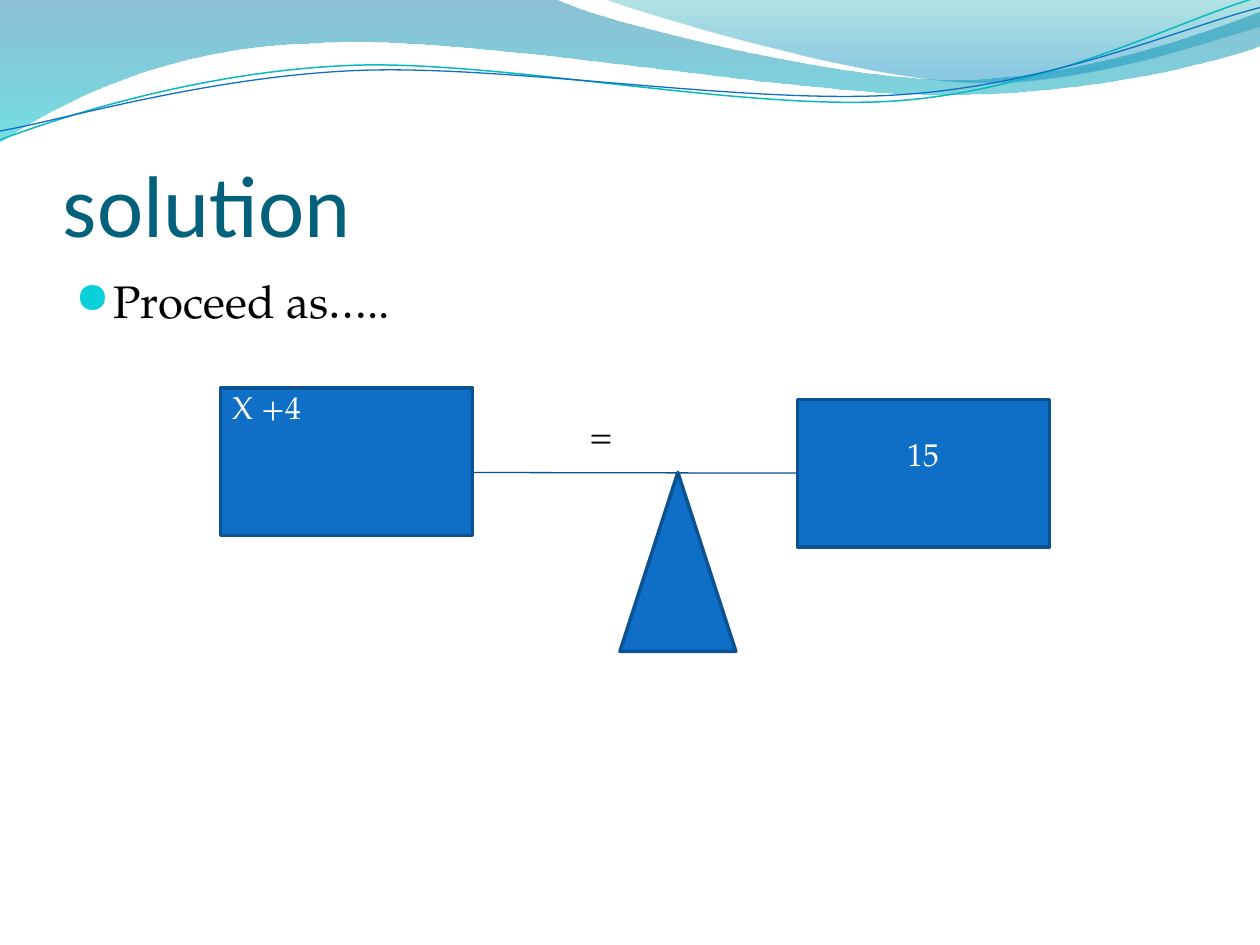
import dataclasses

import pptx
import pptx.dml.color
import pptx.enum.shapes
import pptx.enum.text
import pptx.oxml.ns
import pptx.util
from lxml import etree

Inches = pptx.util.Inches
Pt = pptx.util.Pt
MSO_SHAPE = pptx.enum.shapes.MSO_SHAPE
ANCHOR = pptx.enum.text.MSO_ANCHOR
ALIGN = pptx.enum.text.PP_ALIGN
qn = pptx.oxml.ns.qn


@dataclasses.dataclass(frozen=True)
class Theme:
    heading_font: str = "Calibri"
    body_font: str = "TeX Gyre Pagella"
    bullet_font: str = "OpenSymbol"
    title_size: int = 50
    body_size: int = 26
    label_size: int = 18
    title: str = "04617B"
    text: str = "000000"
    label: str = "FFFFFF"
    bullet: str = "0BD0D9"
    fill: str = "0F6FC6"
    outline: str = "0B5292"
    beam: str = "095295"
    teal_wave: str = "0AB8BF"


THEME = Theme()

# Outlines: a pair is a straight step, six numbers are a Bézier curve.
# Bands also carry gradient stops of (position, colour, opacity percent).
BANDS = [
    ([(0, 0), (4.4, -0.01), (4.76, 0.17, 6.64, 0.63, 7.58, 0.63),
      (8.53, 0.63, 9.58, 0.26, 10, 0.09), (10.01, 0.36),
      (9.83, 0.44, 8.7, 0.76, 7.46, 0.75),
      (6.22, 0.75, 3.82, 0.28, 2.57, 0.34),
      (1.29, 0.36, 0.46, 0.83, -0.01, 1.13)],
     [(0, "0074A1", 45), (1, "00C6CF", 55)]),
    ([(4.79, -0.01), (5.09, 0.11, 6.82, 0.62, 7.69, 0.65),
      (8.56, 0.69, 9.61, 0.32, 10, 0.21), (10, 0)],
     [(0, "00A1A9", 30), (0.8, "008BBF", 45)]),
]
WAVES = [
    ([(0, 1.11), (0.48, 0.93, 1.58, 0.57, 2.77, 0.52),
      (3.95, 0.47, 5.93, 0.89, 7.13, 0.8),
      (8.33, 0.71, 9.38, 0.15, 9.98, -0.02)], THEME.teal_wave, 0.85),
    ([(0, 1.04), (0.47, 0.96, 1.64, 0.61, 2.83, 0.56),
      (4.03, 0.51, 5.97, 0.84, 7.17, 0.75),
      (8.36, 0.67, 9.41, 0.21, 10, 0.06)], THEME.fill, 0.75),
]


def rgb(value):
    return pptx.dml.color.RGBColor.from_string(value)


def set_line(line, color, width):
    line.color.rgb = rgb(color)
    line.width = Pt(width)


def add_outline(slide, outline, close):
    """Draw all points as segments, then join each curve's three into one."""
    points = [(Inches(step[i]), Inches(step[i + 1]))
              for step in outline for i in range(0, len(step), 2)]
    builder = slide.shapes.build_freeform(*points[0])
    builder.add_line_segments(points[1:], close=close)
    shape = builder.convert_to_shape()
    shape.shadow.inherit = False
    segments = iter(list(shape._element.iter(qn("a:lnTo"))))
    for step in outline[1:]:
        first = next(segments)
        if len(step) == 2:
            continue
        first.tag = qn("a:cubicBezTo")
        for _ in range(2):
            segment = next(segments)
            first.append(segment[0])
            segment.getparent().remove(segment)
    return shape


def add_band(slide, outline, stops):
    shape = add_outline(slide, outline, True)
    shape.line.fill.background()
    shape.fill.gradient()
    shape.fill.gradient_angle = 270
    for stop, (position, color, _) in zip(shape.fill.gradient_stops, stops):
        stop.position = position
        stop.color.rgb = rgb(color)
    gradient = shape._element.spPr.find(qn("a:gradFill"))
    for color, (_, _, opacity) in zip(gradient.iter(qn("a:srgbClr")), stops):
        etree.SubElement(color, qn("a:alpha")).set("val", str(opacity * 1000))


def add_wave(slide, outline, color, width):
    shape = add_outline(slide, outline, False)
    shape.fill.background()
    set_line(shape.line, color, width)


def write(shape, text, font, size, color, align=ALIGN.LEFT, **frame_format):
    frame = shape.text_frame
    for name, value in {"word_wrap": True, **frame_format}.items():
        setattr(frame, name, value)
    paragraph = frame.paragraphs[0]
    paragraph.alignment = align
    run = paragraph.add_run()
    run.text = text
    for name, value in {"name": font, "size": Pt(size)}.items():
        setattr(run.font, name, value)
    run.font.color.rgb = rgb(color)
    return paragraph


def add_text(slide, box, *content, **frame_format):
    shape = slide.shapes.add_textbox(*map(Inches, box))
    return write(shape, *content, **frame_format)


def add_bullet(paragraph):
    properties = paragraph._p.get_or_add_pPr()
    properties.set("marL", str(Inches(0.3)))
    properties.set("indent", str(-Inches(0.3)))
    color = etree.SubElement(properties, qn("a:buClr"))
    etree.SubElement(color, qn("a:srgbClr")).set("val", THEME.bullet)
    for tag, name, value in (("a:buSzPct", "val", "95000"),
                             ("a:buFont", "typeface", THEME.bullet_font),
                             ("a:buChar", "char", "●")):
        etree.SubElement(properties, qn(tag)).set(name, value)


def add_block(slide, kind, box):
    shape = slide.shapes.add_shape(kind, *map(Inches, box))
    shape.shadow.inherit = False
    shape.fill.solid()
    shape.fill.fore_color.rgb = rgb(THEME.fill)
    set_line(shape.line, THEME.outline, 2)
    return shape


def add_beam(slide, start, pan):
    x, y = map(Inches, start)
    beam = slide.shapes.add_connector(
        pptx.enum.shapes.MSO_CONNECTOR.STRAIGHT, x, y, pan.left, y)
    beam.end_connect(pan, 1)
    set_line(beam.line, THEME.beam, 0.75)
    etree.SubElement(beam._element.spPr, qn("a:effectLst"))


def main():
    presentation = pptx.Presentation()
    presentation.slide_width = Inches(10)
    presentation.slide_height = Inches(7.5)
    slide = presentation.slides.add_slide(presentation.slide_layouts[6])

    # Header waves
    for band in BANDS:
        add_band(slide, *band)
    for wave in WAVES:
        add_wave(slide, *wave)

    # Title and bullet
    add_text(slide, (0.5, 0.77, 9, 1.25), "solution", THEME.heading_font,
             THEME.title_size, THEME.title, vertical_anchor=ANCHOR.BOTTOM,
             margin_left=0, margin_right=0, margin_bottom=0)
    add_bullet(add_text(slide, (0.5, 2.12, 9, 4.8), "Proceed as…..",
                        THEME.body_font, THEME.body_size, THEME.text))

    # Balance: two pans, beam, pivot and equals sign
    label = (THEME.body_font, THEME.label_size)
    left_pan = add_block(slide, MSO_SHAPE.RECTANGLE, (1.75, 3.08, 2, 1.17))
    write(left_pan, "X +4", *label, THEME.label,
          vertical_anchor=ANCHOR.TOP, margin_top=0)
    right_pan = add_block(slide, MSO_SHAPE.RECTANGLE, (6.33, 3.17, 2, 1.17))
    write(right_pan, "15", *label, THEME.label, ALIGN.CENTER,
          vertical_anchor=ANCHOR.MIDDLE, margin_bottom=Inches(0.35))
    add_beam(slide, (3.75, 3.75), right_pan)
    add_block(slide, MSO_SHAPE.ISOSCELES_TRIANGLE, (4.92, 3.75, 0.92, 1.42))
    add_text(slide, (4.33, 3.25, 0.92, 0.4), "=", *label, THEME.text,
             margin_left=Inches(0.35))

    presentation.save("out.pptx")


if __name__ == "__main__":
    main()
